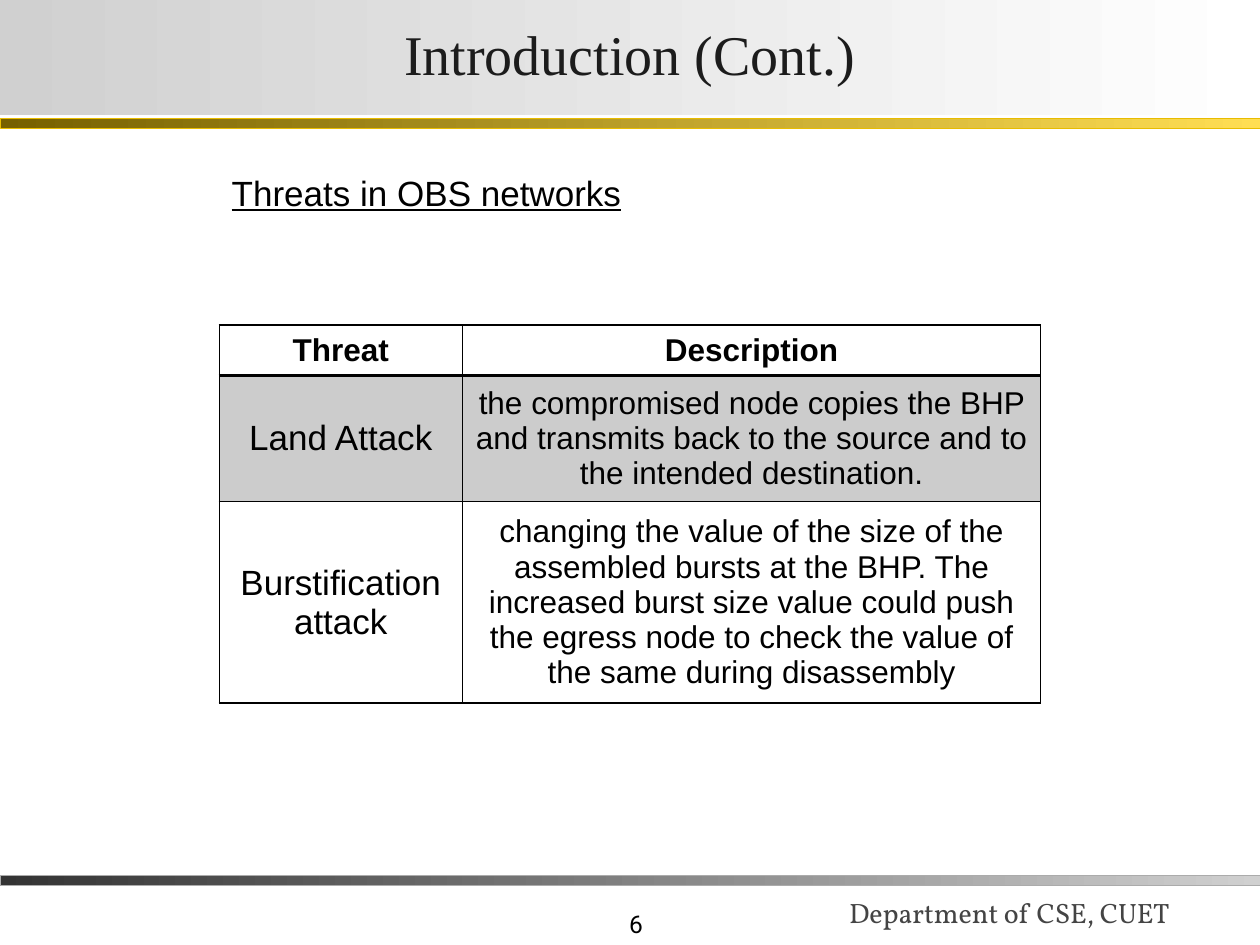
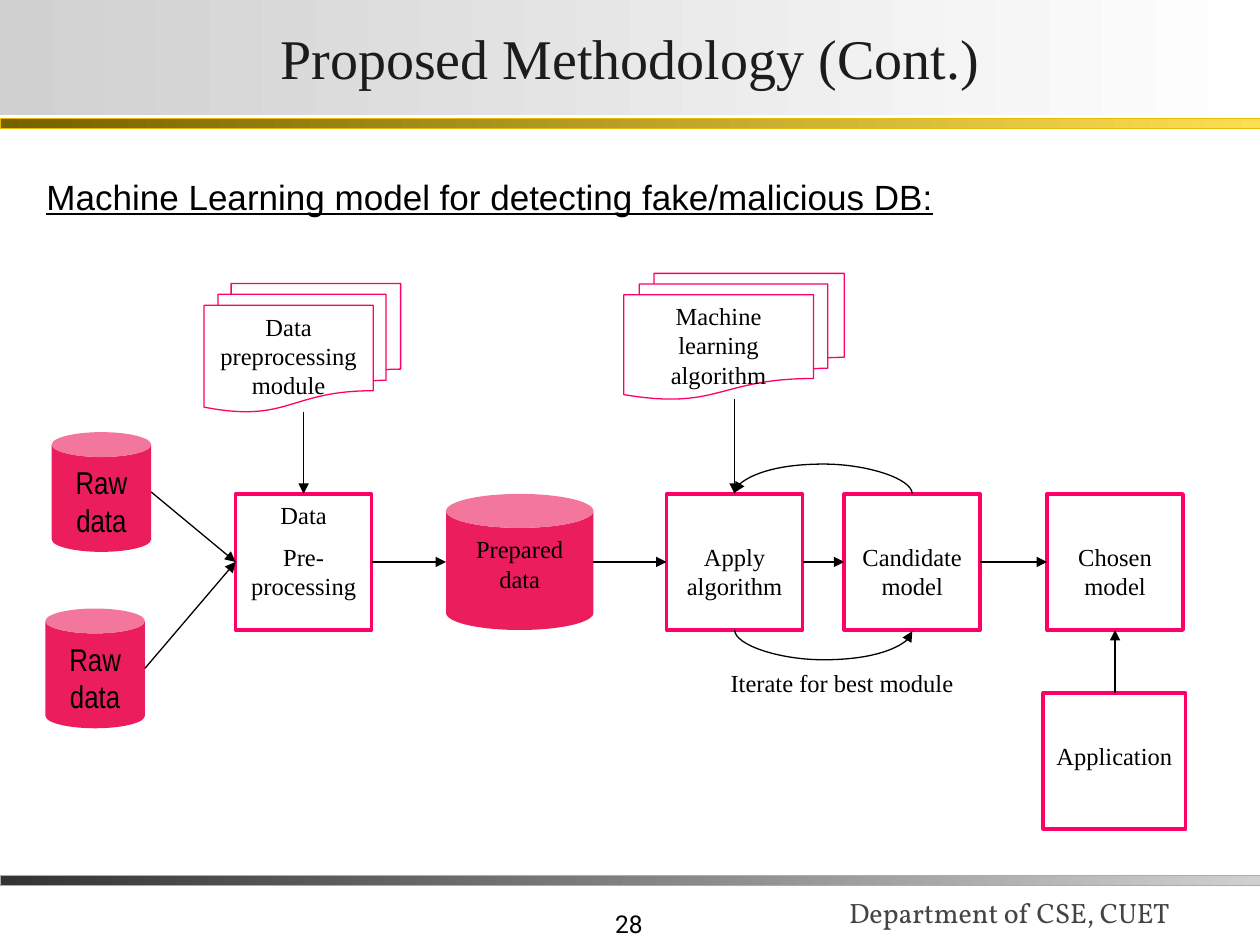
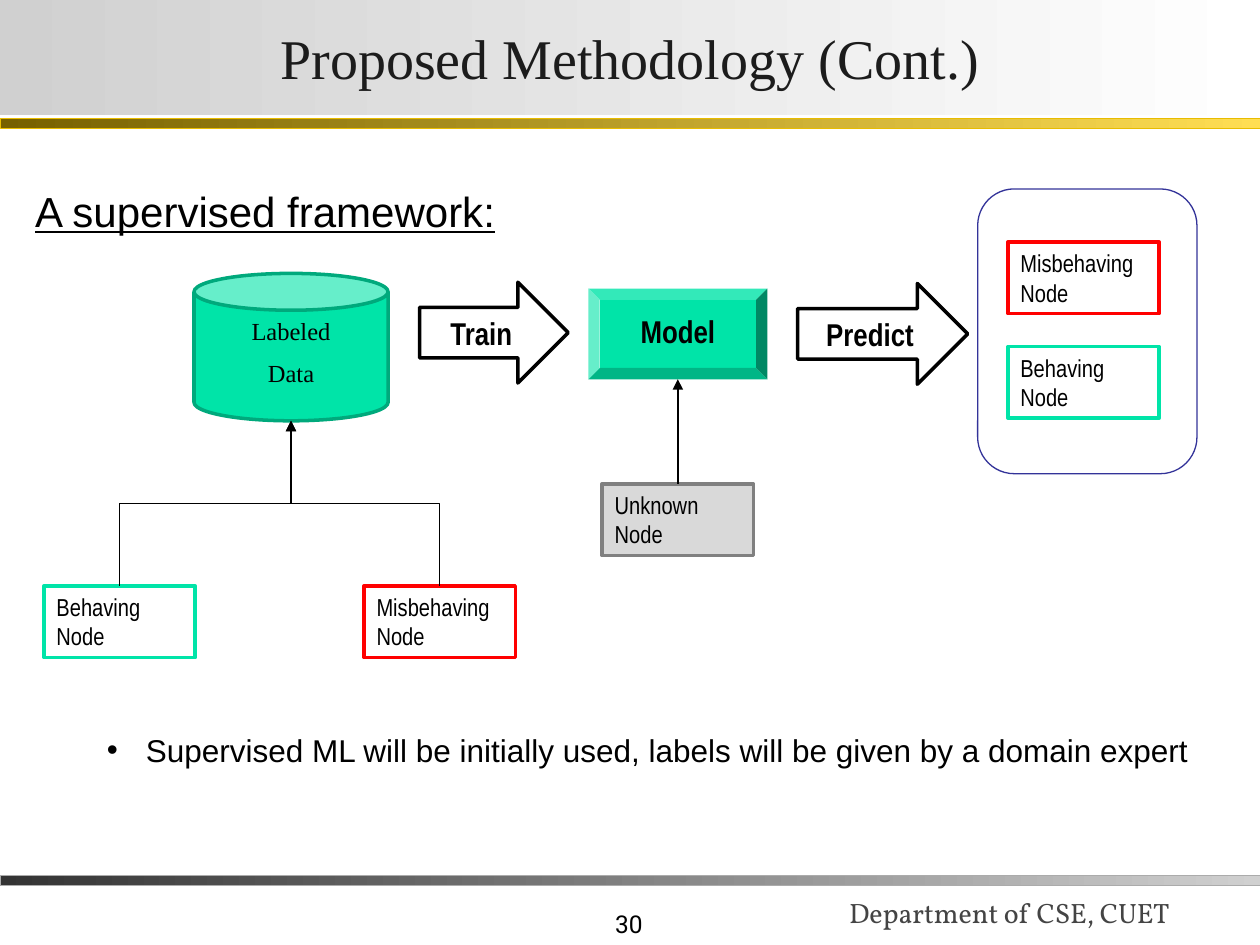
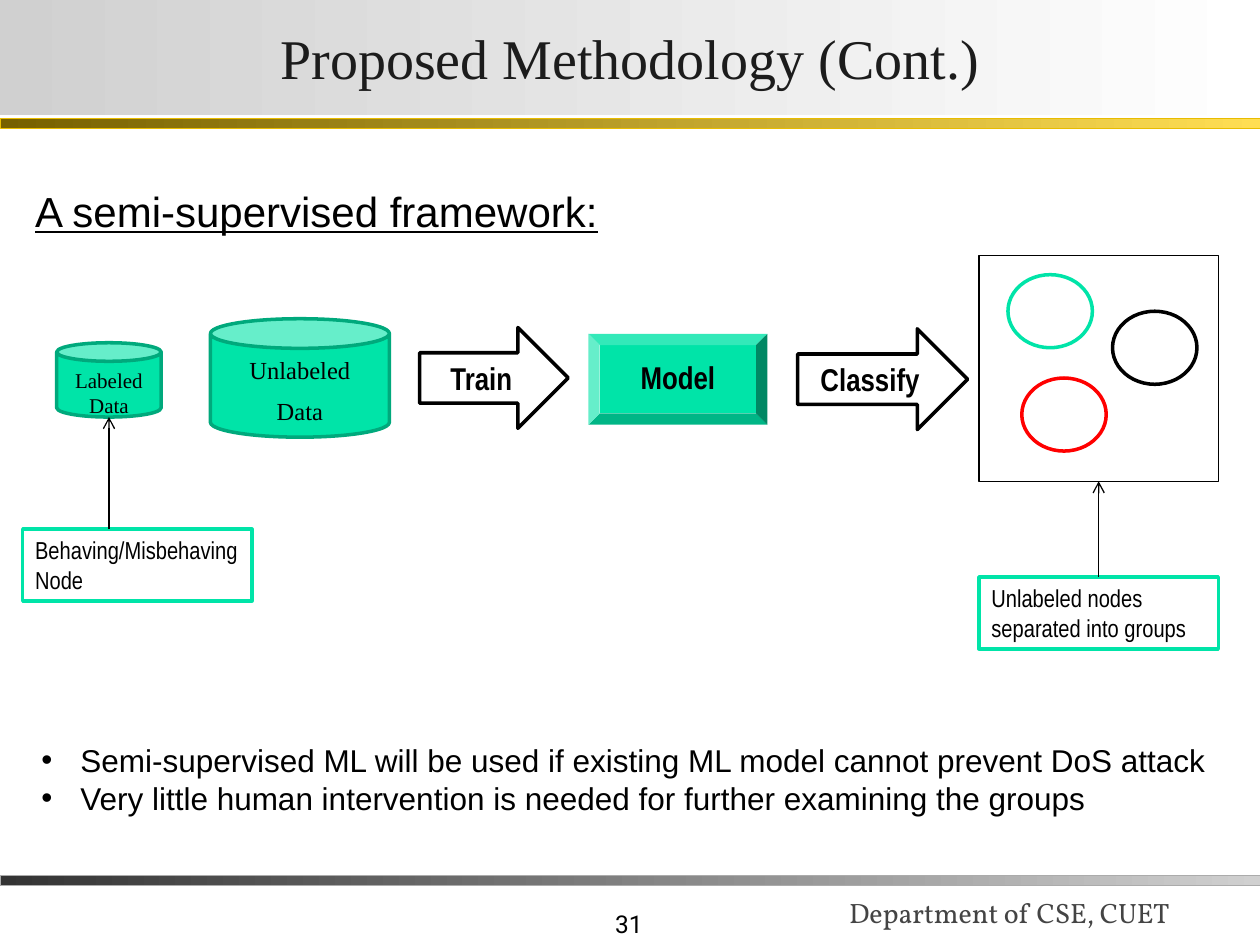
from lxml import etree
from pptx import Presentation
from pptx.dml.color import RGBColor
from pptx.enum.shapes import MSO_CONNECTOR, MSO_SHAPE
from pptx.enum.text import MSO_ANCHOR, MSO_AUTO_SIZE, PP_ALIGN
from pptx.oxml.ns import qn
from pptx.util import Inches, Pt

LEFT, CENTER, RIGHT = PP_ALIGN.LEFT, PP_ALIGN.CENTER, PP_ALIGN.RIGHT
TOP, MIDDLE, BOTTOM = MSO_ANCHOR.TOP, MSO_ANCHOR.MIDDLE, MSO_ANCHOR.BOTTOM
STRAIGHT, ELBOW, CURVE = MSO_CONNECTOR.STRAIGHT, MSO_CONNECTOR.ELBOW, MSO_CONNECTOR.CURVE
RECT, ROUNDED, OVAL = MSO_SHAPE.RECTANGLE, MSO_SHAPE.ROUNDED_RECTANGLE, MSO_SHAPE.OVAL
CAN, BEVEL, ARROW = MSO_SHAPE.CAN, MSO_SHAPE.BEVEL, MSO_SHAPE.RIGHT_ARROW
DOCUMENTS = MSO_SHAPE.FLOWCHART_MULTIDOCUMENT
FIT = MSO_AUTO_SIZE.SHAPE_TO_FIT_TEXT

WIDTH, HEIGHT = 10, 7.5
SERIF, SANS, NARROW = "Times New Roman", "Arial", "Arial Narrow"
COLORS = {
    "black": "000000", "white": "FFFFFF", "title": "1C1C1C", "footer": "444444",
    "silver": "D0D0D0", "charcoal": "333333", "band_edge": "ABABAB",
    "bronze": "766000", "gold": "FFDE53", "gold_edge": "E8BC00",
    "pink": "FF0066", "crimson": "EB1D5D", "mint": "00E4A8", "teal": "00A97C",
    "red": "FF0000", "gray": "808080", "pale": "D9D9D9", "navy": "333399",
    "shade": "CCCCCC",
}
DEPARTMENT = "Department of CSE, CUET"
THREATS = [
    ("Threat", "Description"),
    ("Land Attack", "the compromised node copies the BHP and transmits back to the "
                    "source and to the intended destination."),
    ("Burstification attack", "changing the value of the size of the assembled bursts at "
                              "the BHP. The increased burst size value could push the egress "
                              "node to check the value of the same during disassembly"),
]
SUPERVISED_NOTES = ["Supervised ML will be initially used, labels will be given by a domain expert"]
SEMI_NOTES = [
    "Semi-supervised ML will be used if existing ML model cannot prevent DoS attack",
    "Very little human intervention is needed for further examining the groups",
]

LABEL = dict(font=SERIF, size=14, align=CENTER, gap=7)
BOLD = dict(font=NARROW, size=18, bold=True, align=CENTER)
NODE_TEXT = dict(font=NARROW, size=14)
STYLES = {
    "step": (RECT, "white", "pink", 2, LABEL),
    "lowered": (RECT, "white", "pink", 2, dict(LABEL, inset=(0.1, 0.38, 0.1, 0.05))),
    "documents": (DOCUMENTS, None, "pink", 0.75, LABEL),
    "prepared": (CAN, "crimson", None, 0, LABEL),
    "raw": (CAN, "crimson", None, 0, dict(font=NARROW, size=18, align=CENTER)),
    "data": (CAN, "mint", "teal", 2, LABEL),
    "small data": (CAN, "mint", "teal", 2, dict(LABEL, size=12)),
    "arrow": (ARROW, "white", "black", 2, BOLD),
    "model": (BEVEL, "mint", None, 0, dict(BOLD, inset=(0.1, 0.1, 0.1, 0.05))),
    "good": (RECT, "white", "mint", 2, NODE_TEXT),
    "bad": (RECT, "white", "red", 2, NODE_TEXT),
    "unknown": (RECT, "pale", "gray", 2, NODE_TEXT),
    "outcome": (ROUNDED, None, "navy", 0.75, {}),
    "groups": (RECT, None, "black", 0.75, {}),
    "good group": (OVAL, "white", "mint", 2, {}),
    "other group": (OVAL, "white", "black", 2, {}),
    "bad group": (OVAL, "white", "red", 2, {}),
}

SIDE, FLOW_TOP = 1.08, 3.92
NODE_W, NODE_H = 1.2, 0.57
RAW_W, RAW_H = 0.79, 0.95
GROUP_W, GROUP_H = 0.67, 0.58

METHOD_PARTS = {
    "preprocess": ("step", (1.87, FLOW_TOP, SIDE, SIDE), ["Data", "Pre-processing"]),
    "prepared": ("prepared", (3.54, FLOW_TOP, 1.17, SIDE), ["Prepared data"]),
    "apply": ("lowered", (5.29, FLOW_TOP, SIDE, SIDE), ["Apply algorithm"]),
    "candidate": ("lowered", (6.7, FLOW_TOP, SIDE, SIDE), ["Candidate model"]),
    "chosen": ("lowered", (8.31, FLOW_TOP, SIDE, SIDE), ["Chosen model"]),
    "application": ("lowered", (8.28, 5.5, 1.13, SIDE), ["Application"]),
    "algorithm": ("documents", (4.95, 2.17, 1.75, 1), ["Machine learning algorithm"]),
    "module": ("documents", (1.62, 2.25, 1.56, 1.02), ["Data preprocessing module"]),
    "raw upper": ("raw", (0.41, 3.43, RAW_W, RAW_H), ["Raw data"]),
    "raw lower": ("raw", (0.36, 4.83, RAW_W, RAW_H), ["Raw data"]),
}
METHOD_LINKS = [
    ("raw upper", "right", "preprocess", "left", STRAIGHT),
    ("raw lower", "right", "preprocess", "left", STRAIGHT),
    ("module", "bottom", "preprocess", "top", STRAIGHT),
    ("algorithm", "bottom", "apply", "top", STRAIGHT),
    ("preprocess", "right", "prepared", "left", STRAIGHT),
    ("prepared", "right", "apply", "left", STRAIGHT),
    ("apply", "right", "candidate", "left", STRAIGHT),
    ("candidate", "right", "chosen", "left", STRAIGHT),
    ("application", "top", "chosen", "bottom", STRAIGHT),
    ("candidate", "top", "apply", "top", CURVE),
    ("apply", "bottom", "candidate", "bottom", CURVE),
]


def pipeline(top, verb):
    return {
        "train": ("arrow", (3.33, top, 1.18, 0.8), ["Train"]),
        "model": ("model", (4.67, top + 0.05, 1.42, 0.72), ["Model"]),
        "verb": ("arrow", (6.33, top + 0.01, 1.35, 0.8), [verb]),
    }


SUPERVISED_PARTS = {
    "labeled": ("data", (1.54, 2.17, 1.54, 1.17), ["Labeled", "Data"]),
    **pipeline(2.24, "Predict"),
    "behaving": ("good", (0.35, 4.65, NODE_W, NODE_H), ["Behaving Node"]),
    "misbehaving": ("bad", (2.89, 4.65, NODE_W, NODE_H), ["Misbehaving Node"]),
    "found bad": ("bad", (8, 1.92, NODE_W, NODE_H), ["Misbehaving Node"]),
    "found good": ("good", (8, 2.75, NODE_W, NODE_H), ["Behaving Node"]),
    "unknown": ("unknown", (4.78, 3.84, NODE_W, NODE_H), ["Unknown Node"]),
    "outcome": ("outcome", (7.76, 1.5, 1.74, 2.26), []),
}
SUPERVISED_LINKS = [
    ("behaving", "top", "labeled", "bottom", ELBOW),
    ("misbehaving", "top", "labeled", "bottom", ELBOW),
    ("unknown", "top", "model", "bottom", STRAIGHT),
]
SEMI_PARTS = {
    "labeled": ("small data", (0.45, 2.72, 0.83, 0.59), ["Labeled Data"]),
    "unlabeled": ("data", (1.67, 2.53, 1.42, 0.94), ["Unlabeled", "Data"]),
    **pipeline(2.6, "Classify"),
    "known": ("good", (0.18, 4.2, 1.82, NODE_H), ["Behaving/Misbehaving Node"]),
    "good group": ("good group", (8, 2.18, GROUP_W, GROUP_H), []),
    "other group": ("other group", (8.83, 2.47, GROUP_W, GROUP_H), []),
    "bad group": ("bad group", (8.11, 3, GROUP_W, GROUP_H), []),
    "separated": ("good", (7.77, 4.58, 1.9, NODE_H), ["Unlabeled nodes separated into groups"]),
    "groups": ("groups", (7.77, 2.03, 1.9, 1.79), []),
}
SEMI_LINKS = [
    ("separated", "top", "groups", "bottom", STRAIGHT),
    ("known", "top", "labeled", "bottom", STRAIGHT),
]
EDGES = {"top": (0.5, 0), "bottom": (0.5, 1), "left": (0, 0.5), "right": (1, 0.5)}


def rgb(name):
    return RGBColor.from_string(COLORS[name])


def inches(lengths):
    return [Inches(length) for length in lengths]


def write(frame, paragraphs, font=SANS, size=18, color="black", bold=False, underline=False,
          align=LEFT, anchor=TOP, inset=(0.1, 0.05, 0.1, 0.05), gap=0, spacing=None,
          bullet=None, wrap=True):
    frame.word_wrap = wrap
    if not wrap:
        frame.auto_size = FIT
    frame.vertical_anchor = anchor
    (frame.margin_left, frame.margin_top,
     frame.margin_right, frame.margin_bottom) = inches(inset)
    for index, text in enumerate(paragraphs):
        paragraph = frame.add_paragraph() if index else frame.paragraphs[0]
        paragraph.alignment = align
        if spacing:
            paragraph.line_spacing = spacing
        if index and gap:
            paragraph.space_before = Pt(gap)
        if bullet:
            properties = paragraph._p.get_or_add_pPr()
            properties.set("marL", str(Inches(0.31)))
            properties.set("indent", str(-Inches(0.31)))
            etree.SubElement(properties, qn("a:buFont"), typeface=SANS)
            etree.SubElement(properties, qn("a:buChar"), char=bullet)
        run = paragraph.add_run()
        run.text = text
        run.font.name, run.font.size = font, Pt(size)
        run.font.bold, run.font.underline = bold, underline
        run.font.color.rgb = rgb(color)


def add_text(slide, at, paragraphs, **format):
    write(slide.shapes.add_textbox(*inches(at)).text_frame, paragraphs, **format)


def add_box(slide, kind, at, fill=None, line=None, weight=0):
    box = slide.shapes.add_shape(kind, *inches(at))
    box.shadow.inherit = False
    if isinstance(fill, tuple):
        box.fill.gradient()
        box.fill.gradient_angle = 0
        for stop, color in zip(box.fill.gradient_stops, fill):
            stop.color.rgb = rgb(color)
    elif fill:
        box.fill.solid()
        box.fill.fore_color.rgb = rgb(fill)
    else:
        box.fill.background()
    if line:
        box.line.color.rgb = rgb(line)
        box.line.width = Pt(weight)
    else:
        box.line.fill.background()
    return box


def add_link(slide, start, end, kind, head):
    (x1, y1), (x2, y2) = start, end
    if kind != STRAIGHT:
        if y1 == y2:
            y2 -= 0.01
        dx, dy = x2 - x1, y2 - y1
        cx, cy = (x1 + x2) / 2, (y1 + y2) / 2
        x1, y1, x2, y2 = cx + dy / 2, cy - dx / 2, cx - dy / 2, cy + dx / 2
    link = slide.shapes.add_connector(kind, *inches((x1, y1, x2, y2)))
    link.line.color.rgb = rgb("black")
    link.line.width = Pt(0.75)
    etree.SubElement(link.line._get_or_add_ln(), qn("a:tailEnd"), type=head)
    properties = link._element.spPr
    etree.SubElement(properties, qn("a:effectLst"))
    if kind != STRAIGHT:
        properties.xfrm.set("rot", str(270 * 60000))
    return properties


def edge(part, side):
    left, top, width, height = part[1]
    across, down = EDGES[side]
    return left + across * width, top + down * height


def add_diagram(slide, parts, links, head="triangle"):
    for style, at, paragraphs in parts.values():
        kind, fill, line, weight, format = STYLES[style]
        write(add_box(slide, kind, at, fill, line, weight).text_frame, paragraphs, **format)
    for source, leaving, target, entering, kind in links:
        start, end = edge(parts[source], leaving), edge(parts[target], entering)
        if kind == STRAIGHT and leaving in ("top", "bottom"):
            start = end[0], start[1]
        if kind == CURVE:
            end = end[0], end[1] + (0.01 if leaving == "bottom" else -0.01)
        properties = add_link(slide, start, end, kind, head)
        if kind == CURVE:
            adjustments = properties.find(qn("a:prstGeom")).find(qn("a:avLst"))
            etree.SubElement(adjustments, qn("a:gd"), name="adj1", fmla="val 2400000")


def add_threat_table(slide):
    table = slide.shapes.add_table(3, 2, *inches((1.74, 2.58, 6.52, 2.71))).table
    for column, width in zip(table.columns, (1.93, 4.59)):
        column.width = Inches(width)
    for row, height in zip(table.rows, (0.33, 0.83, 1.55)):
        row.height = Inches(height)
    for r, texts in enumerate(THREATS):
        for c, text in enumerate(texts):
            cell = table.cell(r, c)
            write(cell.text_frame, [text], size=20 if r and not c else 18,
                  bold=not r, align=CENTER)
            cell.vertical_anchor = MIDDLE
            properties = cell._tc.get_or_add_tcPr()
            for side in "LRTB":
                heavy = (r, side) in ((0, "B"), (1, "T"))
                border = etree.SubElement(properties, qn(f"a:ln{side}"),
                                          w=str(Pt(2 if heavy else 1)))
                solid = etree.SubElement(border, qn("a:solidFill"))
                etree.SubElement(solid, qn("a:srgbClr"), val=COLORS["black"])
            if r == 1:
                cell.fill.solid()
                cell.fill.fore_color.rgb = rgb("shade")
            else:
                cell.fill.background()


def add_page(deck, number, title, heading, heading_at, heading_size, spacing=None):
    slide = deck.slides.add_slide(deck.slide_layouts[6])
    add_text(slide, (3.12, 7, 2.08, 0.5), [str(number)], font="Roboto", size=14,
             align=RIGHT, anchor=BOTTOM)
    add_text(slide, (6.64, 6.8, 3.44, 0.62), [DEPARTMENT], font="Vollkorn", size=16,
             color="footer", anchor=BOTTOM)
    add_box(slide, RECT, (0, 6.95, WIDTH, 0.08), ("charcoal", "silver"), "band_edge", 0.25)
    add_box(slide, RECT, (0, 0.94, WIDTH, 0.08), ("bronze", "gold"), "gold_edge", 0.25)
    banner = add_box(slide, RECT, (0, 0, WIDTH, 0.91), ("silver", "white"))
    write(banner.text_frame, [title], font=SERIF, size=32, color="title", align=CENTER,
          anchor=MIDDLE, inset=(0.02, 0.01, 0.02, 0.01), spacing=spacing)
    add_text(slide, heading_at, [heading], size=heading_size, underline=True, wrap=False)
    return slide


def main():
    """Build the four slides on threats and the proposed detection method."""
    deck = Presentation()
    deck.slide_width, deck.slide_height = inches((WIDTH, HEIGHT))
    method = "Proposed Methodology (Cont.)"

    threats = add_page(deck, 6, "Introduction (Cont.)", "Threats in OBS networks",
                       (1.74, 1.31, 3.32, 0.44), 20, spacing=0.9)
    add_threat_table(threats)

    learning = add_page(deck, 28, method,
                        "Machine Learning model for detecting fake/malicious DB:",
                        (0.27, 1.34, 7.29, 0.44), 20)
    add_diagram(learning, METHOD_PARTS, METHOD_LINKS)
    add_text(learning, (5.7, 5.25, 1.98, 0.34), ["Iterate for best module"],
             font=SERIF, size=14, wrap=False)

    supervised = add_page(deck, 30, method, "A supervised framework:",
                          (0.18, 1.42, 3.89, 0.5), 24)
    add_diagram(supervised, SUPERVISED_PARTS, SUPERVISED_LINKS)
    add_text(supervised, (0.75, 5.75, 8.87, 0.4), SUPERVISED_NOTES, bullet="•", wrap=False)

    semi = add_page(deck, 31, method, "A semi-supervised framework:",
                    (0.18, 1.42, 4.71, 0.5), 24)
    add_diagram(semi, SEMI_PARTS, SEMI_LINKS, head="arrow")
    add_text(semi, (0.23, 5.83, 9.53, 0.71), SEMI_NOTES, bullet="•", wrap=False)

    deck.save("out.pptx")


if __name__ == "__main__":
    main()
